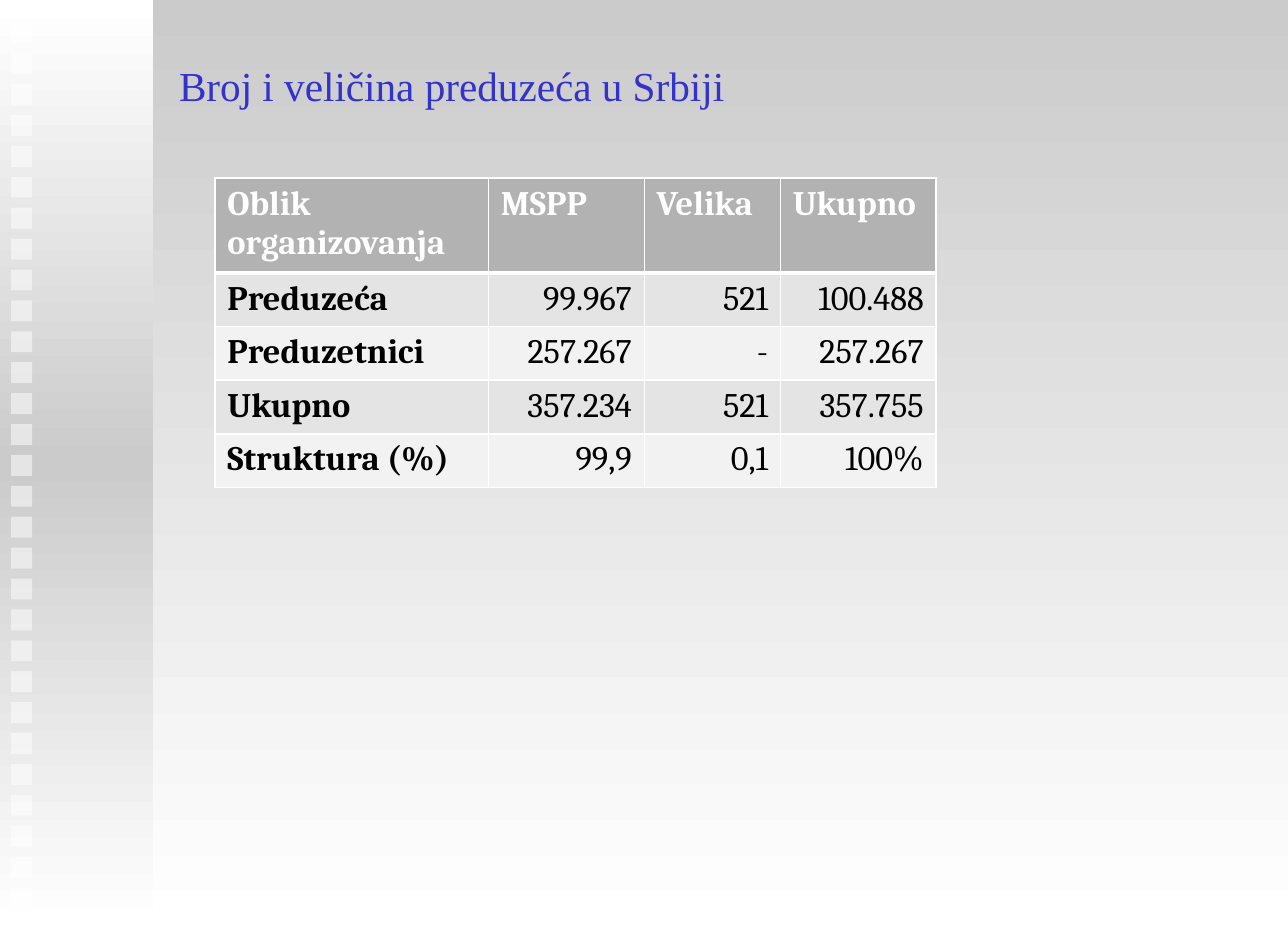
from copy import deepcopy

from lxml import etree
from pptx import Presentation
from pptx.dml.color import RGBColor
from pptx.enum.shapes import MSO_SHAPE
from pptx.enum.text import PP_ALIGN
from pptx.oxml.ns import qn
from pptx.util import Cm, Pt

RECTANGLE = MSO_SHAPE.RECTANGLE
LEFT, RIGHT, JUSTIFY = PP_ALIGN.LEFT, PP_ALIGN.RIGHT, PP_ALIGN.JUSTIFY

WIDTH, HEIGHT = 26.47, 19.05
SQUARE_COUNT, FIRST_SQUARE, LAST_SQUARE = 29, 0.46, 18.24
COLUMN_WIDTHS = [5.62, 3.2, 2.8, 3.2]
HEADER_HEIGHT, ROW_HEIGHT = 1.86, 1.07
ENTERPRISES = [
    ["Oblik organizovanja", "MSPP", "Velika", "Ukupno"],
    ["Preduzeća", "99.967", "521", "100.488"],
    ["Preduzetnici", "257.267", "-", "257.267"],
    ["Ukupno", "357.234", "521", "357.755"],
    ["Struktura (%)", "99,9", "0,1", "100%"],
]


def color(value):
    return RGBColor.from_string(value)


def write(frame, text, font, size, ink, bold=False, align=LEFT, before=0):
    para = frame.paragraphs[0]
    para.alignment = align
    para.space_before = Pt(before)
    span = para.add_run()
    span.text = text
    span.font.name = font
    span.font.size = Pt(size)
    span.font.bold = bold
    span.font.color.rgb = color(ink)


class SlideBuilder:
    white, gray = "FFFFFF", "CBCBCB"
    header, bands = "B2B2B2", ["E4E4E4", "F2F2F2"]
    title_ink, table_ink = "3333CC", "000000"
    title_font, table_font = "Times New Roman", "Cambria"

    def __init__(self, page):
        self.page = page

    def gradient(self, fill, element, colors):
        fill.gradient()
        fill.gradient_angle = 270
        stops = element.find(".//" + qn("a:gsLst"))
        for _ in colors[2:]:
            stops.append(deepcopy(stops[0]))
        for index, (stop, value) in enumerate(zip(fill.gradient_stops, colors)):
            stop.position = index / (len(colors) - 1)
            stop.color.rgb = color(value)

    def background(self, colors):
        self.gradient(self.page.background.fill, self.page.element, colors)

    def rectangle(self, left, top, width, height):
        shape = self.page.shapes.add_shape(RECTANGLE, Cm(left), Cm(top), Cm(width), Cm(height))
        shape.shadow.inherit = False
        shape.line.fill.background()
        return shape

    def sidebar(self, width, colors):
        shape = self.rectangle(0, 0, width, HEIGHT)
        self.gradient(shape.fill, shape.element, colors)

    def square(self, left, top, size, opacity):
        shape = self.rectangle(left, top, size, size)
        shape.fill.solid()
        shape.fill.fore_color.rgb = color(self.white)
        tint = shape.element.spPr.find(".//" + qn("a:srgbClr"))
        etree.SubElement(tint, qn("a:alpha"), val=str(opacity * 1000))

    def title(self, text, left, top, width, height):
        box = self.page.shapes.add_textbox(Cm(left), Cm(top), Cm(width), Cm(height))
        box.text_frame.word_wrap = True
        write(box.text_frame, text, self.title_font, 24, self.title_ink, align=JUSTIFY, before=4.8)

    def border(self, cell, side, points):
        properties = cell._tc.get_or_add_tcPr()
        line = etree.SubElement(properties, qn("a:ln" + side), w=str(Pt(points)))
        fill = etree.SubElement(line, qn("a:solidFill"))
        etree.SubElement(fill, qn("a:srgbClr"), val=self.white)

    def cell(self, cell, text, row, column):
        is_header = row == 0
        for side in "LRTB":
            thick = (row, side) in [(0, "B"), (1, "T")]
            self.border(cell, side, 3 if thick else 1)
        cell.fill.solid()
        cell.fill.fore_color.rgb = color(self.header if is_header else self.bands[(row - 1) % 2])
        write(cell.text_frame, text, self.table_font, 20,
              self.white if is_header else self.table_ink,
              bold=is_header or column == 0,
              align=LEFT if is_header or column == 0 else RIGHT)

    def table(self, rows, left, top, widths):
        heights = [HEADER_HEIGHT] + [ROW_HEIGHT] * (len(rows) - 1)
        table = self.page.shapes.add_table(len(rows), len(widths), Cm(left), Cm(top),
                                           Cm(sum(widths)), Cm(sum(heights))).table
        for column, width in zip(table.columns, widths):
            column.width = Cm(width)
        for row, (texts, height) in enumerate(zip(rows, heights)):
            table.rows[row].height = Cm(height)
            for column, text in enumerate(texts):
                self.cell(table.cell(row, column), text, row, column)


def main():
    deck = Presentation()
    deck.slide_width, deck.slide_height = Cm(WIDTH), Cm(HEIGHT)
    builder = SlideBuilder(deck.slides.add_slide(deck.slide_layouts[6]))
    white, gray = builder.white, builder.gray
    builder.background([gray, white])
    builder.sidebar(3.15, [white, gray, white])
    step = (LAST_SQUARE - FIRST_SQUARE) / (SQUARE_COUNT - 1)
    for index in range(SQUARE_COUNT):
        builder.square(0.23, FIRST_SQUARE + index * step, 0.43, 50)
    builder.title("Broj i veličina preduzeća u Srbiji", 3.43, 1.12, 22.33, 17.2)
    builder.table(ENTERPRISES, 4.42, 3.66, COLUMN_WIDTHS)
    deck.save("out.pptx")


if __name__ == "__main__":
    main()
